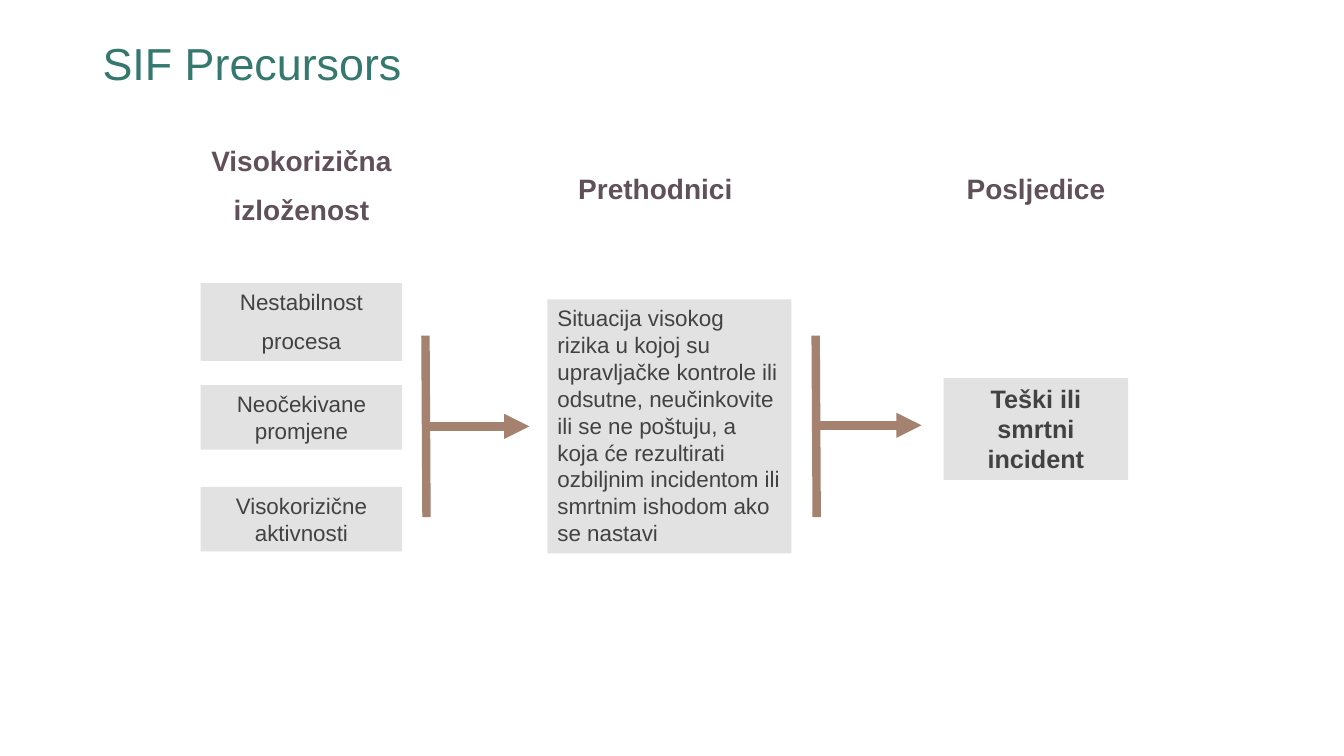
from dataclasses import dataclass

from lxml import etree
from pptx import Presentation
from pptx.dml.color import RGBColor
from pptx.enum.shapes import MSO_CONNECTOR, MSO_SHAPE
from pptx.enum.text import MSO_ANCHOR, PP_ALIGN
from pptx.oxml.ns import qn
from pptx.util import Inches, Pt

RECT = MSO_SHAPE.RECTANGLE
STRAIGHT = MSO_CONNECTOR.STRAIGHT
LEFT, CENTER = PP_ALIGN.LEFT, PP_ALIGN.CENTER
TOP, MIDDLE = MSO_ANCHOR.TOP, MSO_ANCHOR.MIDDLE

FONT = "Arial"
GREEN, PLUM, DARK = "35786E", "605059", "424242"
GRAY, BROWN = "E2E2E2", "A5816F"


@dataclass
class Label:
    text: str
    left: float
    top: float
    width: float
    height: float
    size: int
    color: str = DARK
    bold: bool = False
    fill: str = ""
    align: PP_ALIGN = CENTER
    anchor: MSO_ANCHOR = TOP
    spacing: float = 1.0


@dataclass
class Line:
    x1: float
    y1: float
    x2: float
    y2: float
    arrow: bool = False


def rgb(code: str) -> RGBColor:
    return RGBColor.from_string(code)


def draw_label(slide, item: Label) -> None:
    area = [Inches(v) for v in (item.left, item.top, item.width, item.height)]
    if item.fill:
        shape = slide.shapes.add_shape(RECT, *area)
        shape.shadow.inherit = False
        shape.fill.solid()
        shape.fill.fore_color.rgb = rgb(item.fill)
        shape.line.fill.background()
    else:
        shape = slide.shapes.add_textbox(*area)
    frame = shape.text_frame
    frame.text = item.text
    frame.word_wrap = True
    frame.vertical_anchor = item.anchor
    for index, para in enumerate(frame.paragraphs):
        para.alignment = item.align
        para.line_spacing = item.spacing
        if index:
            para.space_before = Pt(item.size * 0.56)
        for run in para.runs:
            font = run.font
            font.name, font.size, font.bold = FONT, Pt(item.size), item.bold
            font.color.rgb = rgb(item.color)


def draw_line(slide, item: Line) -> None:
    ends = [Inches(v) for v in (item.x1, item.y1, item.x2, item.y2)]
    line = slide.shapes.add_connector(STRAIGHT, *ends)
    line.line.color.rgb = rgb(BROWN)
    line.line.width = Pt(6)
    props = line._element.spPr
    if item.arrow:
        etree.SubElement(props.find(qn("a:ln")), qn("a:tailEnd"), type="triangle")
    etree.SubElement(props, qn("a:effectLst"))


# Title and column headings
TITLE = Label("SIF Precursors", 0.92, 0.22, 11.5, 0.87, 32, GREEN,
              align=LEFT, anchor=MIDDLE, spacing=0.9)
HEADS = [
    Label(text, left, top, width, height, 20, PLUM, True)
    for text, left, top, width, height in (
        ("Visokorizična\nizloženost", 1.99, 1.37, 2, 0.94),
        ("Prethodnici", 5.51, 1.65, 1.98, 0.44),
        ("Posljedice", 9.24, 1.65, 2.07, 0.44),
    )
]

# Exposures, precursor and outcome
CAUSES = [
    Label(text, 1.99, top, 2, height, 16, fill=GRAY)
    for text, top, height in (
        ("Nestabilnost\nprocesa", 2.81, 0.77),
        ("Neočekivane promjene", 3.82, 0.64),
        ("Visokorizične aktivnosti", 4.83, 0.64),
    )
]
STATE = Label(
    "Situacija visokog rizika u kojoj su upravljačke kontrole ili odsutne, "
    "neučinkovite ili se ne poštuju, a koja će rezultirati ozbiljnim "
    "incidentom ili smrtnim ishodom ako se nastavi",
    5.43, 2.97, 2.42, 2.52, 16, fill=GRAY, align=LEFT)
RESULT = Label("Teški ili smrtni incident", 9.36, 3.75, 1.83, 1.01, 18,
               bold=True, fill=GRAY)

# Each bar gathers a column, and its arrow leads to the next one
LINES = [
    Line(4.24, 4.23, 5.25, 4.23, True),
    Line(4.23, 5.13, 4.22, 3.33),
    Line(8.07, 4.22, 9.14, 4.22, True),
    Line(8.1, 5.13, 8.09, 3.33),
]


def main() -> None:
    deck = Presentation()
    deck.slide_width, deck.slide_height = Inches(13.33), Inches(7.5)
    slide = deck.slides.add_slide(deck.slide_layouts[6])
    for line in LINES:
        draw_line(slide, line)
    for label in [TITLE, *HEADS, *CAUSES, STATE, RESULT]:
        draw_label(slide, label)
    deck.save("out.pptx")


if __name__ == "__main__":
    main()
